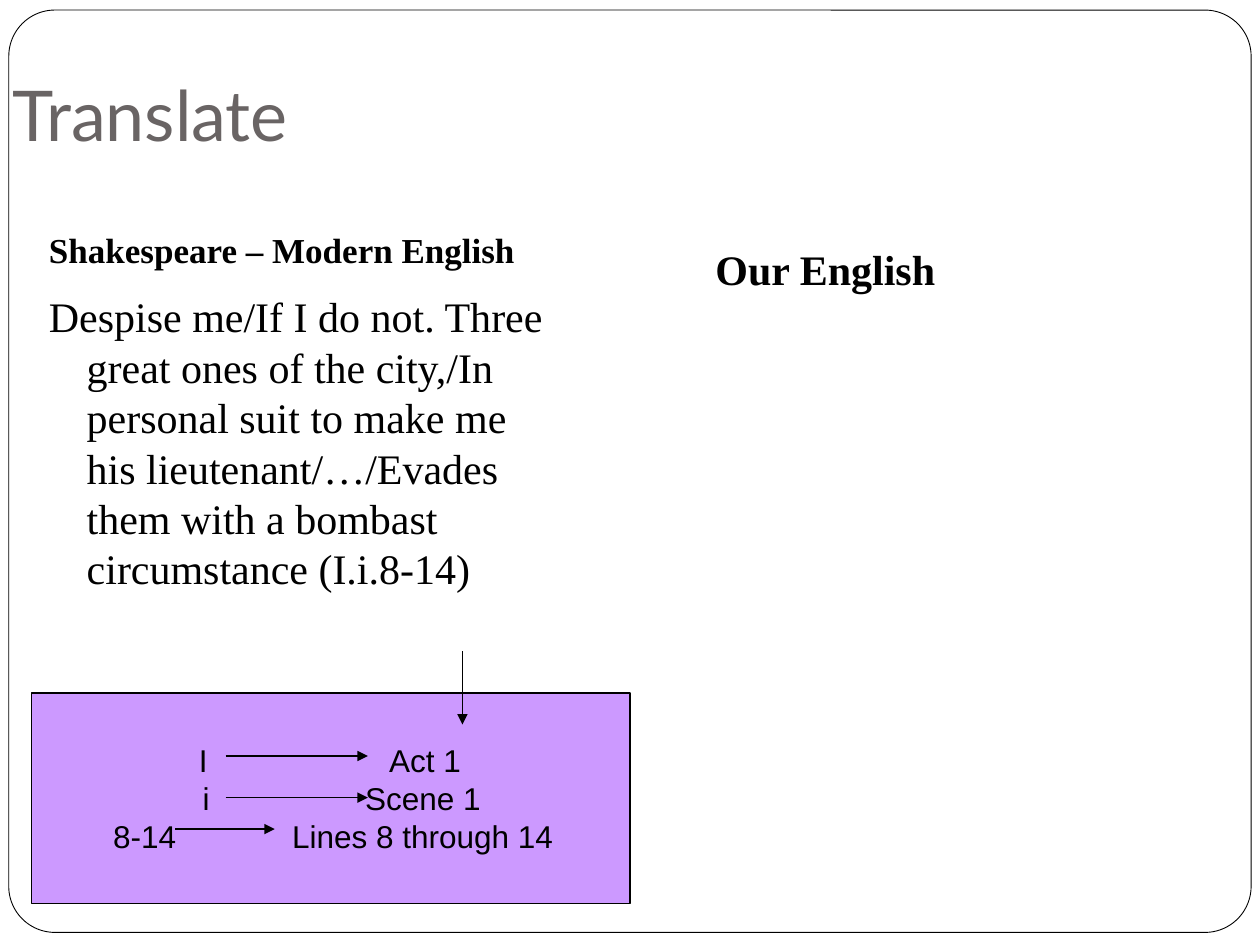
"""Build a slide that translates a Shakespeare passage and explains its citation."""
from dataclasses import dataclass

import pptx
import pptx.dml.color
import pptx.enum.shapes
import pptx.enum.text
import pptx.oxml.ns
import pptx.util
from lxml import etree
from pptx.util import Inches

COLORS = {"ink": "000000", "title": "696464", "paper": "FFFFFF", "key": "CC99FF"}
SERIF = "Times New Roman"
ANCHOR = pptx.enum.text.MSO_ANCHOR
SHAPE = pptx.enum.shapes.MSO_SHAPE
qn = pptx.oxml.ns.qn


@dataclass
class Box:
    left: float
    top: float
    width: float
    height: float

    def lengths(self) -> tuple:
        return tuple(Inches(n) for n in (self.left, self.top, self.width, self.height))


@dataclass
class Passage:
    text: str
    box: Box
    size: int
    bold: bool = False
    anchor: ANCHOR = ANCHOR.BOTTOM
    hanging: float = 0


@dataclass
class CitationRow:
    symbol: str
    meaning: str
    symbol_tab: float
    meaning_tab: float


@dataclass
class Arrow:
    x1: float
    y1: float
    x2: float
    y2: float


PASSAGES = [
    Passage("Shakespeare – Modern English", Box(0.29, 1.5, 4.42, 0.7), 20, bold=True),
    Passage(
        "Despise me/If I do not. Three great ones of the city,/In personal suit to make me "
        "his lieutenant/…/Evades them with a bombast circumstance (I.i.8-14)",
        Box(0.29, 2.26, 4.13, 3.49), 24, anchor=ANCHOR.TOP, hanging=0.3,
    ),
    Passage("Our English", Box(5.58, 1.68, 4.42, 0.7), 24, bold=True),
]
CITATION = [
    CitationRow("I", "Act 1", 1.23, 2.74),
    CitationRow("i", "Scene 1", 1.26, 2.55),
    CitationRow("8-14", "Lines 8 through 14", 0.55, 1.97),
]
ARROWS = [
    Arrow(1.79, 6, 2.92, 6),
    Arrow(1.79, 6.33, 2.92, 6.33),
    Arrow(1.39, 6.58, 2.18, 6.58),
    Arrow(3.67, 5.17, 3.67, 5.75),
]


def rgb(name: str) -> pptx.dml.color.RGBColor:
    return pptx.dml.color.RGBColor.from_string(COLORS[name])


def style(paragraph, face: str, size: int, color: str = "ink", bold: bool = False) -> None:
    paragraph.alignment = pptx.enum.text.PP_ALIGN.LEFT
    font = paragraph.font
    font.name, font.size, font.bold = face, pptx.util.Pt(size), bold
    font.color.rgb = rgb(color)


def add_panel(slide, preset: SHAPE, box: Box, fill: str, line_width: float):
    panel = slide.shapes.add_shape(preset, *box.lengths())
    panel.shadow.inherit = False
    panel.fill.solid()
    panel.fill.fore_color.rgb = rgb(fill)
    panel.line.color.rgb = rgb("ink")
    panel.line.width = pptx.util.Pt(line_width)
    return panel


def add_frame(slide) -> None:
    frame = add_panel(slide, SHAPE.ROUNDED_RECTANGLE, Box(0.07, 0.08, 9.86, 7.32), "paper", 0.5)
    frame.adjustments[0] = 0.05
    frame.element.getparent().insert(2, frame.element)


def set_title(slide, text: str) -> None:
    title = slide.shapes.title
    title.left, title.top, title.width, title.height = Box(0, 0.3, 9, 1.25).lengths()
    title.text = text
    title.text_frame.auto_size = pptx.enum.text.MSO_AUTO_SIZE.NONE
    title.text_frame.vertical_anchor = ANCHOR.MIDDLE
    title.text_frame.margin_bottom = Inches(0.1)
    style(title.text_frame.paragraphs[0], "Lato", 40, "title")


def add_passage(slide, passage: Passage) -> None:
    frame = slide.shapes.add_textbox(*passage.box.lengths()).text_frame
    frame.word_wrap = True
    frame.vertical_anchor = passage.anchor
    paragraph = frame.paragraphs[0]
    paragraph.text = passage.text
    paragraph.space_before = pptx.util.Pt(5.8)
    style(paragraph, SERIF, passage.size, bold=passage.bold)
    if passage.hanging:
        properties = paragraph._p.get_or_add_pPr()
        properties.set("marL", str(Inches(passage.hanging)))
        properties.set("indent", str(-Inches(passage.hanging)))


def add_citation_key(slide, rows: list[CitationRow]) -> None:
    key = add_panel(slide, SHAPE.RECTANGLE, Box(0.25, 5.5, 4.75, 1.67), "key", 0.75)
    frame = key.text_frame
    frame.word_wrap = True
    frame.vertical_anchor = ANCHOR.MIDDLE
    for index, row in enumerate(rows):
        paragraph = frame.add_paragraph() if index else frame.paragraphs[0]
        paragraph.text = f"\t{row.symbol}\t{row.meaning}"
        stops = etree.SubElement(paragraph._p.get_or_add_pPr(), qn("a:tabLst"))
        for position in (row.symbol_tab, row.meaning_tab):
            etree.SubElement(stops, qn("a:tab"), pos=str(Inches(position)), algn="l")
        style(paragraph, "Arial", 18)


def add_arrow(slide, arrow: Arrow) -> None:
    ends = [Inches(n) for n in (arrow.x1, arrow.y1, arrow.x2, arrow.y2)]
    connector = slide.shapes.add_connector(pptx.enum.shapes.MSO_CONNECTOR.STRAIGHT, *ends)
    connector.line.color.rgb = rgb("ink")
    connector.line.width = pptx.util.Pt(0.75)
    etree.SubElement(connector.line._get_or_add_ln(), qn("a:tailEnd"), type="triangle")
    etree.SubElement(connector.element.spPr, qn("a:effectLst"))


def main() -> None:
    deck = pptx.Presentation()
    deck.slide_width, deck.slide_height = Inches(10), Inches(7.5)
    slide = deck.slides.add_slide(deck.slide_layouts.get_by_name("Title Only"))
    add_frame(slide)
    set_title(slide, "Translate")
    for passage in PASSAGES:
        add_passage(slide, passage)
    add_citation_key(slide, CITATION)
    for arrow in ARROWS:
        add_arrow(slide, arrow)
    deck.save("out.pptx")


if __name__ == "__main__":
    main()
